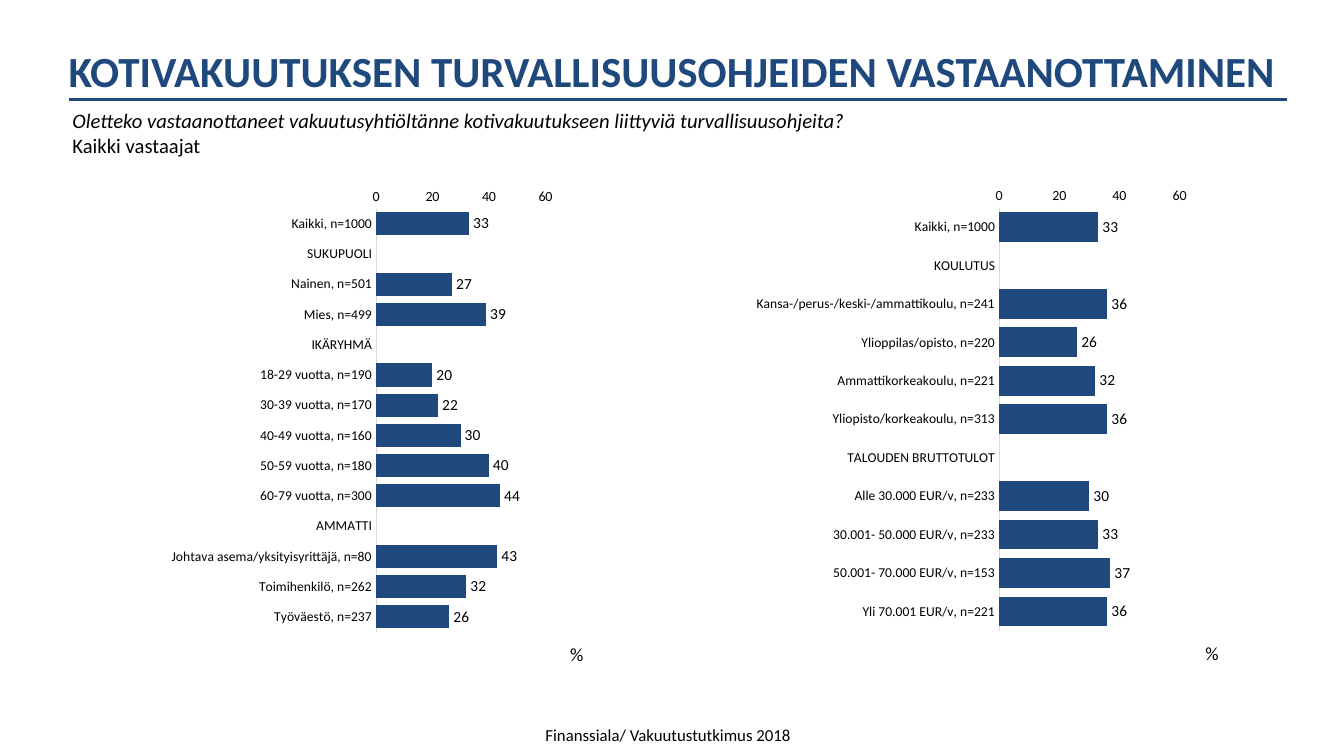
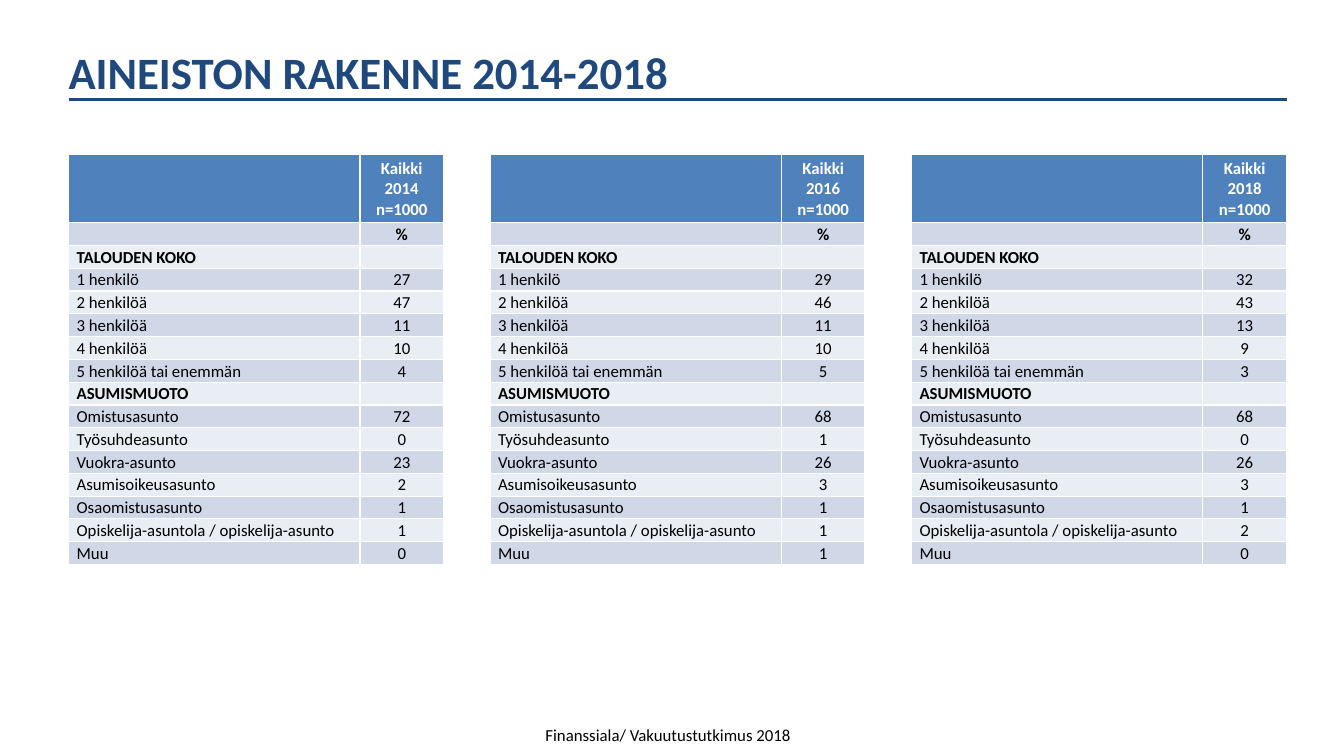
from dataclasses import dataclass

import pptx
import pptx.chart.data
import pptx.dml.color
import pptx.enum.chart
import pptx.enum.shapes
import pptx.enum.text
import pptx.oxml
import pptx.oxml.ns
import pptx.util
from lxml import etree

Inches, Pt = pptx.util.Inches, pptx.util.Pt
RGB = pptx.dml.color.RGBColor.from_string
qn = pptx.oxml.ns.qn
ALIGN = pptx.enum.text.PP_ALIGN
ANCHOR = pptx.enum.text.MSO_ANCHOR


@dataclass(frozen=True)
class Theme:
    font: str = "Calibri"
    navy: str = "1F497D"
    text: str = "000000"
    white: str = "FFFFFF"
    axis: str = "D9D9D9"
    header: str = "4F81BD"
    bands: tuple = ("D0D8E8", "E9EDF4")
    title: float = 32
    long_title: float = 30.7
    question: float = 14.7
    unit: float = 13.3
    body: float = 12
    label: float = 11
    tick: float = 10
    category: float = 9.7


T = Theme()
FOOTER = "Finanssiala/ Vakuutustutkimus 2018"
LEFT, RIGHT = 0.68, 12.76

CHART_TITLE = "KOTIVAKUUTUKSEN TURVALLISUUSOHJEIDEN VASTAANOTTAMINEN"
QUESTION = "Oletteko vastaanottaneet vakuutusyhtiöltänne kotivakuutukseen liittyviä turvallisuusohjeita?"
BASE = "Kaikki vastaajat"

# box and plot are left, top, width, height on the slide
CHARTS = [
    dict(box=(0.79, 1.77, 6.3, 4.88), plot=(3.73, 2.07, 1.68, 4.2), unit=(5.51, 6.33), bars=[
        ("Kaikki, n=1000", 33),
        ("SUKUPUOLI", None),
        ("Nainen, n=501", 27),
        ("Mies, n=499", 39),
        ("IKÄRYHMÄ", None),
        ("18-29 vuotta, n=190", 20),
        ("30-39 vuotta, n=170", 22),
        ("40-49 vuotta, n=160", 30),
        ("50-59 vuotta, n=180", 40),
        ("60-79 vuotta, n=300", 44),
        ("AMMATTI", None),
        ("Johtava asema/yksityisyrittäjä, n=80", 43),
        ("Toimihenkilö, n=262", 32),
        ("Työväestö, n=237", 26),
    ]),
    dict(box=(6.56, 1.76, 6.72, 4.88), plot=(9.91, 2.06, 1.79, 4.2), unit=(11.81, 6.32), bars=[
        ("Kaikki, n=1000", 33),
        ("KOULUTUS", None),
        ("Kansa-/perus-/keski-/ammattikoulu, n=241", 36),
        ("Ylioppilas/opisto, n=220", 26),
        ("Ammattikorkeakoulu, n=221", 32),
        ("Yliopisto/korkeakoulu, n=313", 36),
        ("TALOUDEN BRUTTOTULOT", None),
        ("Alle 30.000 EUR/v, n=233", 30),
        ("30.001- 50.000 EUR/v, n=233", 33),
        ("50.001- 70.000 EUR/v, n=153", 37),
        ("Yli 70.001 EUR/v, n=221", 36),
    ]),
]

TABLE_TITLE = "AINEISTON RAKENNE 2014-2018"
YEARS = (2014, 2016, 2018)
# row label, then one share per year; headings have no shares
SHARES = [
    ("TALOUDEN KOKO", None),
    ("1 henkilö", (27, 29, 32)),
    ("2 henkilöä", (47, 46, 43)),
    ("3 henkilöä", (11, 11, 13)),
    ("4 henkilöä", (10, 10, 9)),
    ("5 henkilöä tai enemmän", (4, 5, 3)),
    ("ASUMISMUOTO", None),
    ("Omistusasunto", (72, 68, 68)),
    ("Työsuhdeasunto", (0, 1, 0)),
    ("Vuokra-asunto", (23, 26, 26)),
    ("Asumisoikeusasunto", (2, 3, 3)),
    ("Osaomistusasunto", (1, 1, 1)),
    ("Opiskelija-asuntola / opiskelija-asunto", (1, 1, 2)),
    ("Muu", (0, 1, 0)),
]
TABLE_TOP, TABLE_PITCH, TABLE_HEIGHT, HEADER_HEIGHT = 1.53, 4.18, 4.07, 0.68
COLUMNS = (2.89, 0.83)


def style(font, size, color=T.text, bold=False, italic=False):
    font.name, font.size = T.font, Pt(size)
    font.bold, font.italic = bold, italic
    font.color.rgb = RGB(color)


def inches(box):
    return [Inches(v) for v in box]


def add_text(slide, box, lines, size, align=ALIGN.LEFT, wrap=True):
    """Add a text box; lines are (text, italic) pairs."""
    tf = slide.shapes.add_textbox(*inches(box)).text_frame
    tf.word_wrap = wrap
    for i, (text, italic) in enumerate(lines):
        p = tf.add_paragraph() if i else tf.paragraphs[0]
        p.text, p.alignment = text, align
        style(p.font, size, italic=italic)
    return tf


def add_slide(prs, title, size):
    """Add a slide with the shared title, rule and footer."""
    slide = prs.slides.add_slide(prs.slide_layouts[5])
    sp = slide.shapes.title
    sp.left, sp.top, sp.width, sp.height = inches((0.58, 0.39, 12.39, 0.64))
    tf = sp.text_frame
    tf.text = title
    tf.vertical_anchor = ANCHOR.TOP
    tf.auto_size = pptx.enum.text.MSO_AUTO_SIZE.NONE
    p = tf.paragraphs[0]
    p.alignment = ALIGN.LEFT
    style(p.font, size, T.navy, bold=True)

    rule = slide.shapes.add_connector(
        pptx.enum.shapes.MSO_CONNECTOR.STRAIGHT, *inches((LEFT, 0.99, RIGHT, 0.99)))
    rule.line.color.rgb, rule.line.width = RGB(T.navy), Pt(2.25)
    etree.SubElement(rule.element.spPr, qn("a:effectLst"))

    tf = add_text(slide, (5.25, 7.11, 2.78, 0.36), [(FOOTER, False)], T.body, wrap=False)
    tf.margin_left = tf.margin_right = Inches(0.16)
    tf.margin_top = tf.margin_bottom = Inches(0.08)
    return slide


def place_plot(chart, box, plot):
    """Fix the inner plot area, given in slide inches, within the chart box."""
    area = chart.element.find(".//" + qn("c:plotArea"))
    for old in area.findall(qn("c:layout")):
        area.remove(old)
    layout = etree.Element(qn("c:layout"))
    manual = etree.SubElement(layout, qn("c:manualLayout"))
    settings = [("layoutTarget", "inner"), ("xMode", "edge"), ("yMode", "edge"),
                ("x", (plot[0] - box[0]) / box[2]), ("y", (plot[1] - box[1]) / box[3]),
                ("w", plot[2] / box[2]), ("h", plot[3] / box[3])]
    for tag, value in settings:
        etree.SubElement(manual, qn("c:" + tag)).set("val", str(value))
    area.insert(0, layout)


def add_bars(slide, box, plot, unit, bars):
    enum = pptx.enum.chart
    data = pptx.chart.data.CategoryChartData(number_format="#,##0")
    data.categories = [name for name, _ in bars]
    data.add_series("Series 1", [value for _, value in bars])
    chart = slide.shapes.add_chart(enum.XL_CHART_TYPE.BAR_CLUSTERED, *inches(box), data).chart
    chart.has_title = chart.has_legend = False
    style(chart.font, T.tick)
    place_plot(chart, box, plot)

    cat, val = chart.category_axis, chart.value_axis
    for axis, size in ((cat, T.category), (val, T.tick)):
        axis.has_major_gridlines = False
        axis.major_tick_mark = axis.minor_tick_mark = enum.XL_TICK_MARK.NONE
        style(axis.tick_labels.font, size)
    cat.reverse_order = True
    cat.crosses = enum.XL_AXIS_CROSSES.MAXIMUM
    cat.format.line.color.rgb, cat.format.line.width = RGB(T.axis), Pt(0.75)
    val.format.line.fill.background()
    val.minimum_scale, val.maximum_scale, val.major_unit = 0, 60, 20
    val.tick_labels.number_format = "#,##0"
    val.tick_labels.number_format_is_linked = False

    bar_plot = chart.plots[0]
    bar_plot.gap_width, bar_plot.vary_by_categories = 30, False
    series = bar_plot.series[0]
    series.format.fill.solid()
    series.format.fill.fore_color.rgb = RGB(T.navy)
    labels = series.data_labels
    labels.show_value = True
    labels.position = enum.XL_LABEL_POSITION.OUTSIDE_END
    style(labels.font, T.label)

    add_text(slide, (*unit, 0.42, 0.33), [("%", False)], T.unit, ALIGN.CENTER)


def fill_cell(cell, text, fill, color, bold, is_label):
    cell.fill.solid()
    cell.fill.fore_color.rgb = RGB(fill)
    cell.vertical_anchor = ANCHOR.MIDDLE
    cell.margin_left = Inches(0.08 if is_label else 0.01)
    cell.margin_right = cell.margin_top = Inches(0.01)
    cell.margin_bottom = 0
    cell.text_frame.text = text
    for p in cell.text_frame.paragraphs:
        p.alignment = ALIGN.LEFT if is_label else ALIGN.CENTER
        style(p.font, T.body, color, bold)
        if not text:  # keeps an empty row from growing
            etree.SubElement(p._p, qn("a:endParaRPr")).set("sz", str(T.body * 100))


def add_year_table(slide, index, year):
    rows = [("", f"Kaikki\n{year}\nn=1000", True), ("", "%", True)]
    rows += [(name, str(shares[index]) if shares else "", shares is None)
             for name, shares in SHARES]
    box = (LEFT + index * TABLE_PITCH, TABLE_TOP, sum(COLUMNS), TABLE_HEIGHT)
    table = slide.shapes.add_table(len(rows), len(COLUMNS), *inches(box)).table
    for column, width in zip(table.columns, COLUMNS):
        column.width = Inches(width)
    row_height = (TABLE_HEIGHT - HEADER_HEIGHT) / (len(rows) - 1)
    for r, (name, value, bold) in enumerate(rows):
        table.rows[r].height = Inches(row_height if r else HEADER_HEIGHT)
        fill = T.bands[(r - 1) % 2] if r else T.header
        color = T.text if r else T.white
        for c, text in enumerate((name, value)):
            fill_cell(table.cell(r, c), text, fill, color, bold, is_label=c == 0)


def main():
    prs = pptx.Presentation()
    prs.slide_width, prs.slide_height = Inches(13.33), Inches(7.5)

    slide = add_slide(prs, CHART_TITLE, T.long_title)
    add_text(slide, (0.62, 1.02, 12.13, 0.59), [(QUESTION, True), (BASE, False)], T.question)
    for chart in CHARTS:
        add_bars(slide, **chart)

    slide = add_slide(prs, TABLE_TITLE, T.title)
    for index, year in enumerate(YEARS):
        add_year_table(slide, index, year)

    prs.save("out.pptx")


if __name__ == "__main__":
    main()
